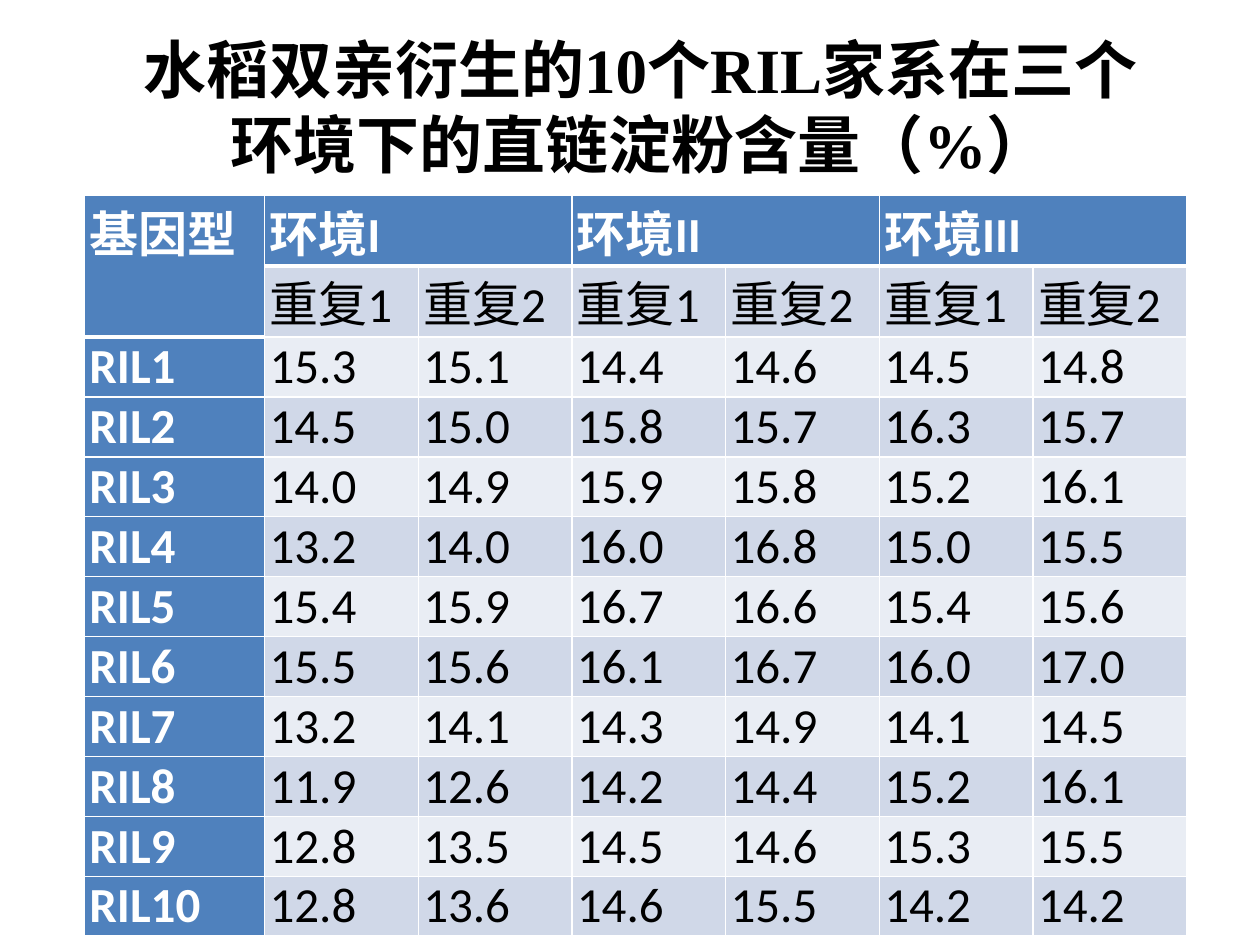
from dataclasses import dataclass

from lxml.etree import SubElement
from pptx import Presentation
from pptx.dml.color import RGBColor
from pptx.enum.text import MSO_ANCHOR, PP_ALIGN
from pptx.oxml.ns import qn
from pptx.table import Table, _Cell
from pptx.util import Inches, Pt

WHITE = RGBColor(0xFF, 0xFF, 0xFF)
BLACK = RGBColor(0, 0, 0)
BLUE = RGBColor(0x4F, 0x81, 0xBD)
DARK = RGBColor(0xD0, 0xD8, 0xE8)
LIGHT = RGBColor(0xE9, 0xED, 0xF4)


@dataclass(frozen=True)
class Style:
    fill: RGBColor
    color: RGBColor = BLACK
    bold: bool = False
    anchor: MSO_ANCHOR = MSO_ANCHOR.TOP
    base: float = 1  # bottom border, points


@dataclass(frozen=True)
class Line:
    name: str
    values: str


HEAD = Style(BLUE, WHITE, True, base=3)
NAME = Style(BLUE, WHITE, True)
SUB = Style(DARK)
BANDS = [Style(fill, anchor=MSO_ANCHOR.BOTTOM) for fill in (LIGHT, DARK)]

SITES = ["环境I", "环境II", "环境III"]
REPS = ["重复1", "重复2"]
LINES = [
    Line("RIL1", "15.3 15.1 14.4 14.6 14.5 14.8"),
    Line("RIL2", "14.5 15.0 15.8 15.7 16.3 15.7"),
    Line("RIL3", "14.0 14.9 15.9 15.8 15.2 16.1"),
    Line("RIL4", "13.2 14.0 16.0 16.8 15.0 15.5"),
    Line("RIL5", "15.4 15.9 16.7 16.6 15.4 15.6"),
    Line("RIL6", "15.5 15.6 16.1 16.7 16.0 17.0"),
    Line("RIL7", "13.2 14.1 14.3 14.9 14.1 14.5"),
    Line("RIL8", "11.9 12.6 14.2 14.4 15.2 16.1"),
    Line("RIL9", "12.8 13.5 14.5 14.6 15.3 15.5"),
    Line("RIL10", "12.8 13.6 14.6 15.5 14.2 14.2"),
]


def format_cell(cell: _Cell, style: Style) -> None:
    """Set margins, anchor, borders and fill of a cell."""
    cell.margin_left = cell.margin_right = Inches(0.04)
    cell.margin_top = cell.margin_bottom = 0
    cell.vertical_anchor = style.anchor
    props = cell._tc.get_or_add_tcPr()
    # Borders come before the fill in the cell properties
    for side, width in (("L", 1), ("R", 1), ("T", 1), ("B", style.base)):
        edge = SubElement(props, qn(f"a:ln{side}"), w=str(Pt(width)))
        paint = SubElement(edge, qn("a:solidFill"))
        SubElement(paint, qn("a:srgbClr"), val=str(WHITE))
    cell.fill.solid()
    cell.fill.fore_color.rgb = style.fill


def write_cell(cell: _Cell, text: str, style: Style) -> None:
    format_cell(cell, style)
    cell.text = text
    font = cell.text_frame.paragraphs[0].font
    font.name, font.size = "Calibri", Pt(28)
    font.bold, font.color.rgb = style.bold, style.color


def fill_heads(table: Table) -> None:
    """Write the two heading rows with their merged cells."""
    write_cell(table.cell(0, 0), "基因型", HEAD)
    format_cell(table.cell(1, 0), HEAD)
    table.cell(0, 0).merge(table.cell(1, 0))
    for i, site in enumerate(SITES):
        col = 1 + i * len(REPS)
        first, last = table.cell(0, col), table.cell(0, col + 1)
        write_cell(first, site, HEAD)
        format_cell(last, HEAD)
        first.merge(last)
        for j, rep in enumerate(REPS):
            write_cell(table.cell(1, col + j), rep, SUB)


def fill_lines(table: Table) -> None:
    """Write one banded row for each line."""
    for i, line in enumerate(LINES):
        write_cell(table.cell(i + 2, 0), line.name, NAME)
        for j, value in enumerate(line.values.split(), 1):
            write_cell(table.cell(i + 2, j), value, BANDS[i % 2])


def main() -> None:
    deck = Presentation()
    deck.slide_width, deck.slide_height = Inches(10), Inches(7.5)
    slide = deck.slides.add_slide(deck.slide_layouts[5])

    # Title
    title = slide.shapes.title
    title.left, title.top = Inches(0.83), Inches(0.29)
    title.width, title.height = Inches(8.5), Inches(1.1)
    frame = title.text_frame
    frame.text = "水稻双亲衍生的10个RIL家系在三个环境下的直链淀粉含量（%）"
    frame.vertical_anchor = MSO_ANCHOR.MIDDLE
    para = frame.paragraphs[0]
    para.alignment = PP_ALIGN.CENTER
    para.font.name, para.font.size = "Times New Roman", Pt(36)
    para.font.bold, para.font.color.rgb = True, BLACK

    # Table grid
    rows, cols = len(LINES) + 2, len(SITES) * len(REPS) + 1
    table = slide.shapes.add_table(
        rows, cols, Inches(0.67), Inches(1.55), Inches(8.73), Inches(5.6)
    ).table
    for i, col in enumerate(table.columns):
        col.width = Inches(1.22 if i else 1.43)
    for i, row in enumerate(table.rows):
        row.height = Inches(0.5 if i < 2 else 0.46)

    # Table content
    fill_heads(table)
    fill_lines(table)
    deck.save("out.pptx")


if __name__ == "__main__":
    main()
